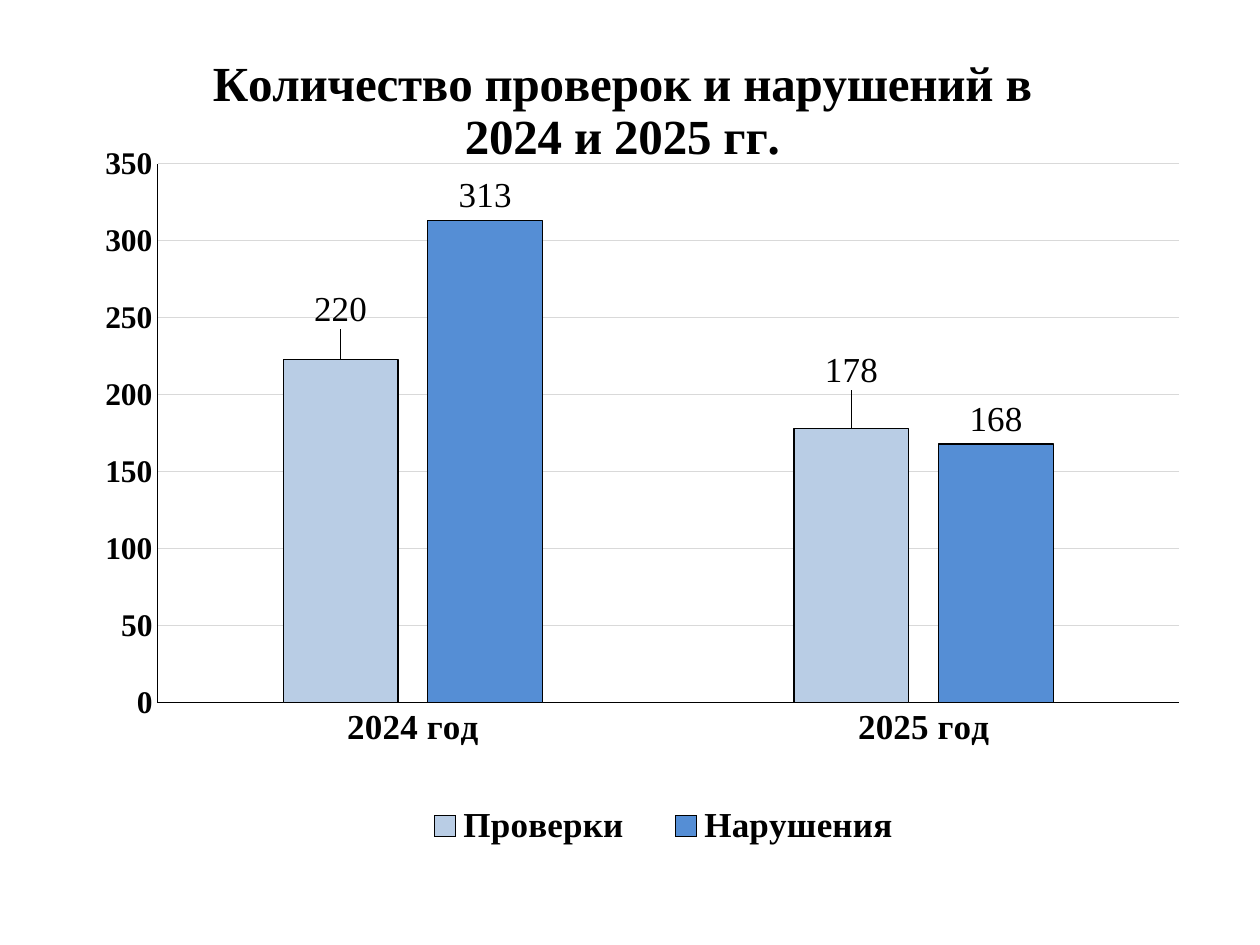
from dataclasses import dataclass

from lxml import etree
from pptx import Presentation
from pptx.chart.data import CategoryChartData
from pptx.dml.color import RGBColor
from pptx.enum.chart import (XL_CHART_TYPE, XL_LABEL_POSITION,
                             XL_LEGEND_POSITION, XL_TICK_MARK)
from pptx.oxml.ns import qn
from pptx.util import Inches, Pt


@dataclass(frozen=True)
class Theme:
    face: str = "Times New Roman"
    ink: str = "000000"
    grid: str = "D9D9D9"
    fills: tuple = ("B9CDE5", "558ED5")
    line: float = 0.75
    title: int = 28
    text: int = 20
    scale: int = 18


THEME = Theme()
YEARS = ("2024 год", "2025 год")
SERIES = (("Проверки", (223, 178)), ("Нарушения", (313, 168)))
# Label of a point: series, point, text, shift right, shift down
LABELS = ((0, 0, "220", 0, -0.03), (0, 1, "178", 0, -0.04))


def style(font, size, bold=True):
    font.name = THEME.face
    font.size = Pt(size)
    font.bold = bold
    font.color.rgb = RGBColor.from_string(THEME.ink)


def stroke(line, color):
    line.width = Pt(THEME.line)
    line.color.rgb = RGBColor.from_string(color)


def place(part, after, **marks):
    """Give a chart part a manual layout, set after the named child."""
    for old in part.findall(qn("c:layout")):
        part.remove(old)
    layout = etree.Element(qn("c:layout"))
    manual = etree.SubElement(layout, qn("c:manualLayout"))
    for tag, val in marks.items():
        etree.SubElement(manual, qn("c:" + tag)).set("val", str(val))
    child = part.find(qn("c:" + after)) if after else None
    if child is None:
        part.insert(0, layout)
    else:
        child.addnext(layout)


def add_title(chart):
    chart.has_title = True
    title = chart.chart_title
    run = title.text_frame.paragraphs[0].add_run()
    run.text = "Количество проверок и нарушений в 2024 и 2025 гг."
    style(run.font, THEME.title)
    place(title._element, "tx", xMode="edge", yMode="edge", x=0.11, y=0.02)


def set_axes(chart):
    sizes = ((chart.category_axis, THEME.text), (chart.value_axis, THEME.scale))
    for axis, size in sizes:
        axis.major_tick_mark = axis.minor_tick_mark = XL_TICK_MARK.NONE
        style(axis.tick_labels.font, size)
        stroke(axis.format.line, THEME.ink)
    scale = chart.value_axis
    scale.minimum_scale, scale.maximum_scale, scale.major_unit = 0, 350, 50
    stroke(scale.major_gridlines.format.line, THEME.grid)


def set_bars(plot):
    plot.gap_width, plot.overlap = 219, -26
    plot.vary_by_categories = False
    for bars, color in zip(plot.series, THEME.fills):
        bars.format.fill.solid()
        bars.format.fill.fore_color.rgb = RGBColor.from_string(color)
        stroke(bars.format.line, THEME.ink)
        labels = bars.data_labels
        labels.show_value = True
        labels.position = XL_LABEL_POSITION.OUTSIDE_END
        style(labels.font, THEME.text, False)
    for row, col, text, right, down in LABELS:
        label = plot.series[row].points[col].data_label
        run = label.text_frame.paragraphs[0].add_run()
        run.text = text
        style(run.font, THEME.text, False)
        label.position = XL_LABEL_POSITION.OUTSIDE_END
        mark = plot.series[row].data_labels._element.findall(qn("c:dLbl"))[col]
        place(mark, "idx", x=right, y=down)


def add_legend(chart):
    chart.has_legend = True
    legend = chart.legend
    legend.position = XL_LEGEND_POSITION.BOTTOM
    legend.include_in_layout = False
    style(legend.font, THEME.text)
    place(legend._element, "legendPos", xMode="edge", yMode="edge",
          x=0.28, y=0.93, w=0.48, h=0.06)


def add_bars(slide, left, top, width, height):
    data = CategoryChartData()
    data.categories = YEARS
    for name, values in SERIES:
        data.add_series(name, values)
    chart = slide.shapes.add_chart(XL_CHART_TYPE.COLUMN_CLUSTERED,
                                   left, top, width, height, data).chart
    style(chart.font, THEME.text)
    add_title(chart)
    set_axes(chart)
    set_bars(chart.plots[0])
    add_legend(chart)
    # Inner plot area as shares of the chart box
    area = chart._chartSpace.chart.plotArea
    place(area, None, layoutTarget="inner", xMode="edge", yMode="edge",
          x=Inches(0.61) / width, y=Inches(1.09) / height,
          w=Inches(8.11) / width, h=Inches(4.28) / height)


def main():
    deck = Presentation()
    deck.slide_width, deck.slide_height = Inches(10), Inches(7.5)
    slide = deck.slides.add_slide(deck.slide_layouts[6])
    add_bars(slide, Inches(0.64), Inches(0.21), Inches(8.9), Inches(6.61))
    deck.save("out.pptx")


if __name__ == "__main__":
    main()
